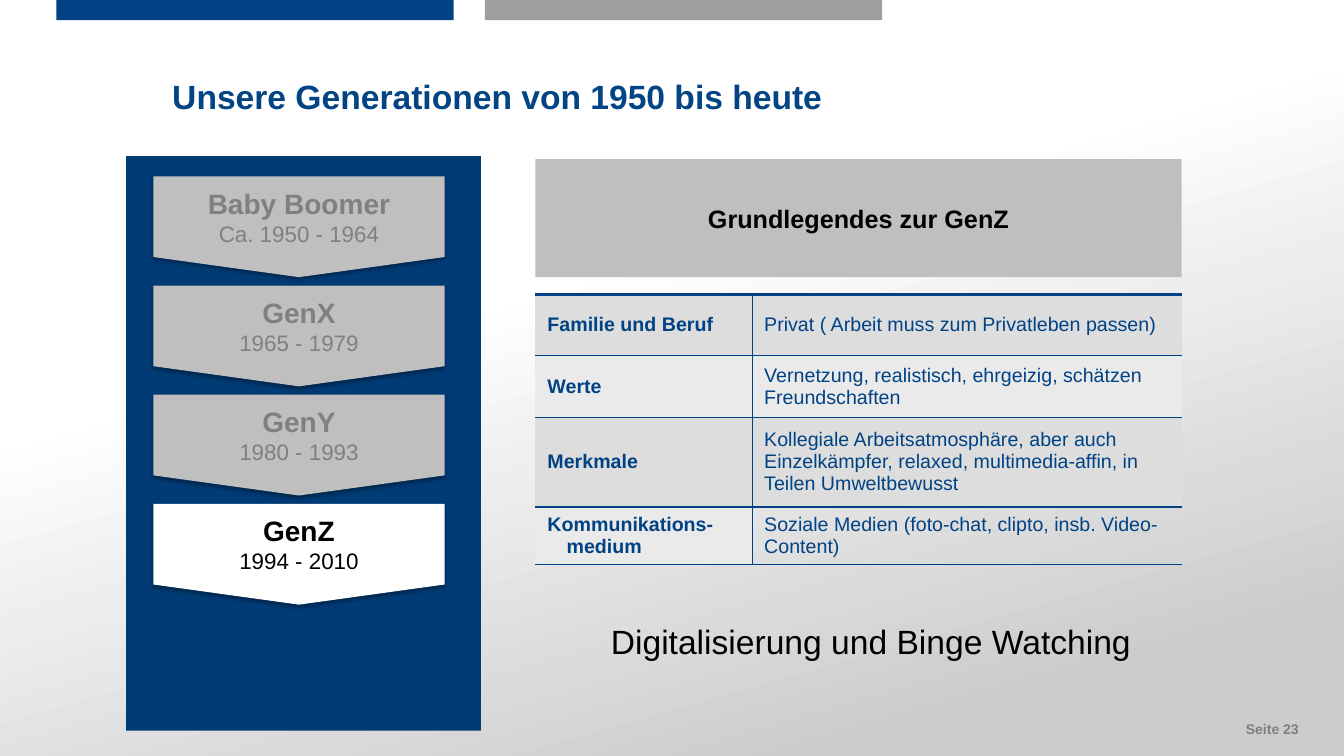
from pptx import Presentation
from pptx.dml.color import RGBColor
from pptx.enum.shapes import MSO_SHAPE as Shape
from pptx.enum.text import MSO_ANCHOR as Anchor, PP_ALIGN as Align
from pptx.oxml import parse_xml
from pptx.oxml.ns import nsdecls
from pptx.util import Inches, Pt

THEME = {
    "font": "Arial",
    "color": {
        "navy": "003B76", "blue": "014284", "title": "034484", "table": "004284",
        "bar": "9D9EA0", "panel": "BFBFBF", "muted": "808080", "page": "7F7F7F",
        "black": "000000", "white": "FFFFFF", "shade": "CCCCCC",
        "band_dark": "DDDDDD", "band_light": "EAEAEA",
    },
    "size": {"title": 24, "head": 18, "name": 20, "years": 16, "cell": 14, "page": 10},
}

TITLE = "Unsere Generationen von 1950 bis heute"
HEADING = "Grundlegendes zur GenZ"
CONCLUSION = "Digitalisierung und Binge Watching"
PAGE = "Seite 23"
GENERATIONS = [
    ("Baby Boomer", "Ca. 1950 - 1964"),
    ("GenX", "1965 - 1979"),
    ("GenY", "1980 - 1993"),
    ("GenZ", "1994 - 2010"),
]
CURRENT = "GenZ"
FACTS = [
    ("Familie und Beruf", "Privat ( Arbeit muss zum Privatleben passen)", 0.61),
    ("Werte", "Vernetzung, realistisch, ehrgeizig, schätzen Freundschaften", 0.61),
    ("Merkmale", "Kollegiale Arbeitsatmosphäre, aber auch Einzelkämpfer, relaxed, "
                 "multimedia-affin, in Teilen Umweltbewusst", 0.89),
    ("Kommunikations-medium", "Soziale Medien (foto-chat, clipto, insb. Video-Content)", 0.57),
]
FACT_COLUMNS = (2.15, 4.26)
BARS = [(0.56, "blue"), (4.81, "bar")]
STEP_TOP, STEP_PITCH = 1.75, 1.083

prs = Presentation()
prs.slide_width, prs.slide_height = Inches(13.33), Inches(7.5)
slide = prs.slides.add_slide(prs.slide_layouts[6])


def rgb(color):
    return RGBColor.from_string(THEME["color"][color])


def apply(target, values):
    for name, value in values.items():
        setattr(target, name, value)


def write(frame, lines, align=Align.LEFT, **paragraph_format):
    for index, (text, size, color, bold) in enumerate(lines):
        paragraph = frame.add_paragraph() if index else frame.paragraphs[0]
        apply(paragraph, {"alignment": align, **paragraph_format})
        run = paragraph.add_run()
        run.text = text
        apply(run.font, {"name": THEME["font"], "size": Pt(THEME["size"][size]), "bold": bold})
        run.font.color.rgb = rgb(color)


def add_block(box, color=None, kind=Shape.RECTANGLE):
    block = slide.shapes.add_shape(kind, *map(Inches, box))
    block.shadow.inherit = False
    block.line.fill.background()
    if color:
        block.fill.solid()
        block.fill.fore_color.rgb = rgb(color)
    apply(block.text_frame, {"vertical_anchor": Anchor.MIDDLE, "word_wrap": True})
    return block


def add_text(box, line, align=Align.LEFT, frame_format=None, **paragraph_format):
    frame = slide.shapes.add_textbox(*map(Inches, box)).text_frame
    apply(frame, {"word_wrap": True, **(frame_format or {})})
    write(frame, [line], align, **paragraph_format)


def add_shadow(block):
    effects = block.element.spPr.find("{*}effectLst")
    effects.append(parse_xml(
        f'<a:outerShdw {nsdecls("a")} blurRad="{Pt(3.1)}" dist="{Pt(1.8)}" dir="5400000" '
        f'rotWithShape="0"><a:srgbClr val="{THEME["color"]["black"]}">'
        '<a:alpha val="35000"/></a:srgbClr></a:outerShdw>'))


def set_borders(cell, widths):
    properties = cell._tc.get_or_add_tcPr()
    for index, (side, width) in enumerate(widths.items()):
        paint = (f'<a:solidFill><a:srgbClr val="{THEME["color"]["table"]}"/></a:solidFill>'
                 if width else "<a:noFill/>")
        properties.insert(index, parse_xml(
            f'<a:ln{side} {nsdecls("a")} w="{Pt(width)}">{paint}</a:ln{side}>'))


backdrop = add_block((0, 0, 13.33, 7.5))
backdrop.fill.gradient()
backdrop.fill.gradient_angle = 286
for stop, (position, color) in zip(backdrop.fill.gradient_stops, [(0.38, "white"), (0.87, "shade")]):
    stop.position = position
    stop.color.rgb = rgb(color)

no_margins = dict.fromkeys(("margin_left", "margin_top", "margin_right", "margin_bottom"), 0)
add_text((11.44, 7.15, 1.44, 0.27), (PAGE, "page", "page", True), Align.RIGHT, no_margins)
for left, color in BARS:
    add_block((left, 0, 3.94, 0.2), color)
add_text((1.61, 0.5, 7.58, 0.8), (TITLE, "title", "title", True), line_spacing=1.5)

add_block((1.25, 1.55, 3.52, 5.7), "navy")
for index, (name, years) in enumerate(GENERATIONS):
    fill, ink = ("white", "black") if name == CURRENT else ("panel", "muted")
    step = add_block((1.52, STEP_TOP + index * STEP_PITCH, 2.89, 1), fill,
                     Shape.FLOWCHART_OFFPAGE_CONNECTOR)
    add_shadow(step)
    write(step.text_frame, [(name, "name", ink, True), (years, "years", ink, False)], Align.CENTER)

heading = add_block((5.31, 1.58, 6.41, 1.17), "panel")
write(heading.text_frame, [(HEADING, "head", "black", True)], Align.CENTER)

fact_box = (5.31, 2.92, sum(FACT_COLUMNS), sum(height for *_, height in FACTS))
facts = slide.shapes.add_table(len(FACTS), len(FACT_COLUMNS), *map(Inches, fact_box)).table
apply(facts, {"first_row": False, "horz_banding": False})
for column, width in zip(facts.columns, FACT_COLUMNS):
    column.width = Inches(width)
cell_format = {
    "vertical_anchor": Anchor.MIDDLE,
    "margin_left": Inches(0.12), "margin_right": Inches(0.12),
    "margin_top": Inches(0.05), "margin_bottom": Inches(0.05),
}
for row, (topic, detail, height) in enumerate(FACTS):
    facts.rows[row].height = Inches(height)
    for column, text in enumerate((topic, detail)):
        cell = facts.cell(row, column)
        is_topic = column == 0
        apply(cell, cell_format)
        if row == len(FACTS) - 1 and not is_topic:
            cell.fill.background()
        else:
            cell.fill.solid()
            cell.fill.fore_color.rgb = rgb("band_light" if row % 2 else "band_dark")
        set_borders(cell, {"L": 0 if is_topic else 1, "R": 1 if is_topic else 0,
                           "T": 1 if row else 2, "B": 1})
        write(cell.text_frame, [(text, "cell", "table", is_topic)], space_before=Pt(2.8))
        if is_topic:
            indents = cell.text_frame.paragraphs[0]._p.get_or_add_pPr()
            indents.set("marL", str(Inches(0.19)))
            indents.set("indent", str(-Inches(0.19)))

add_text((5.96, 6.11, 5.42, 0.5), (CONCLUSION, "title", "black", False),
         frame_format={"word_wrap": False})

prs.save("out.pptx")
